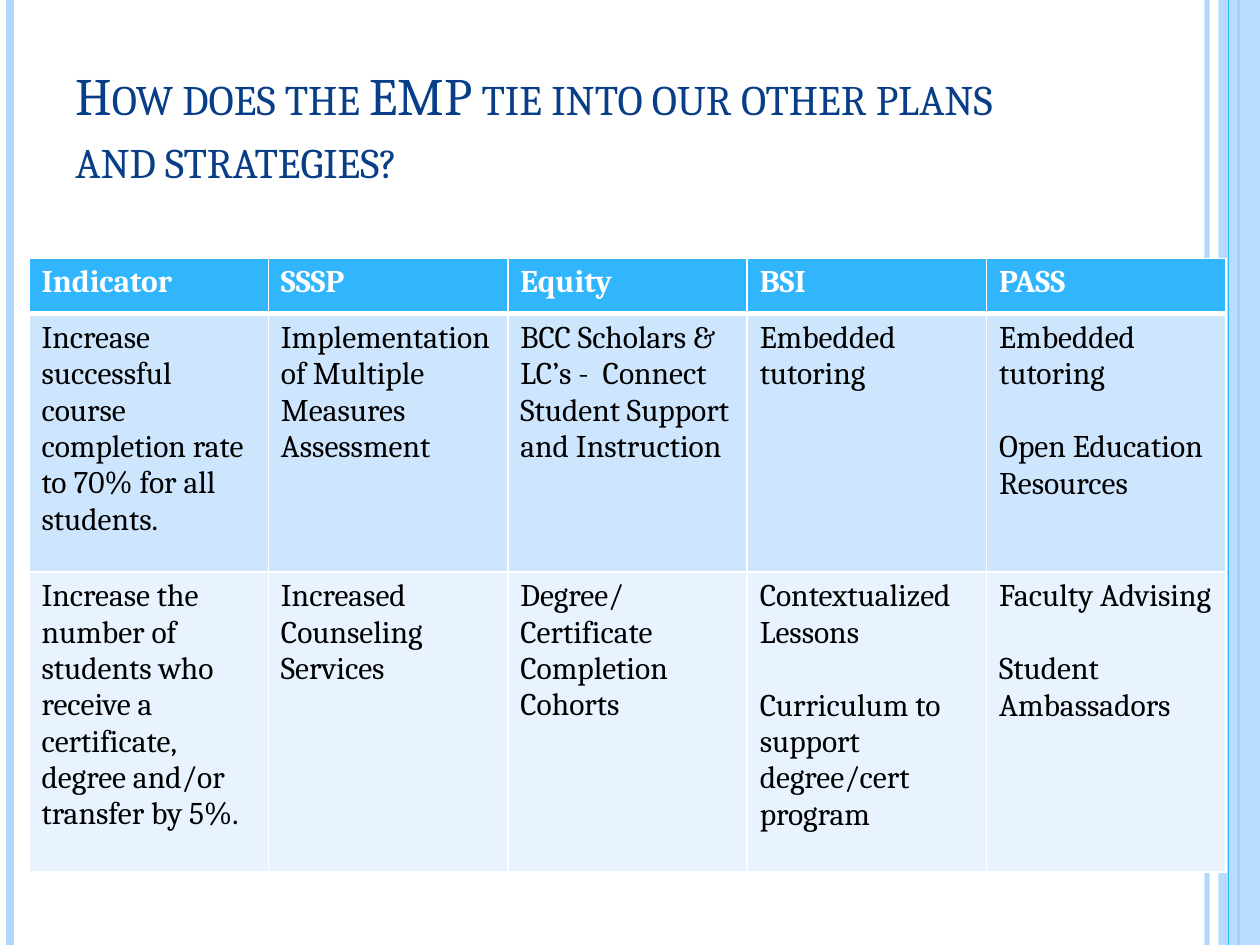
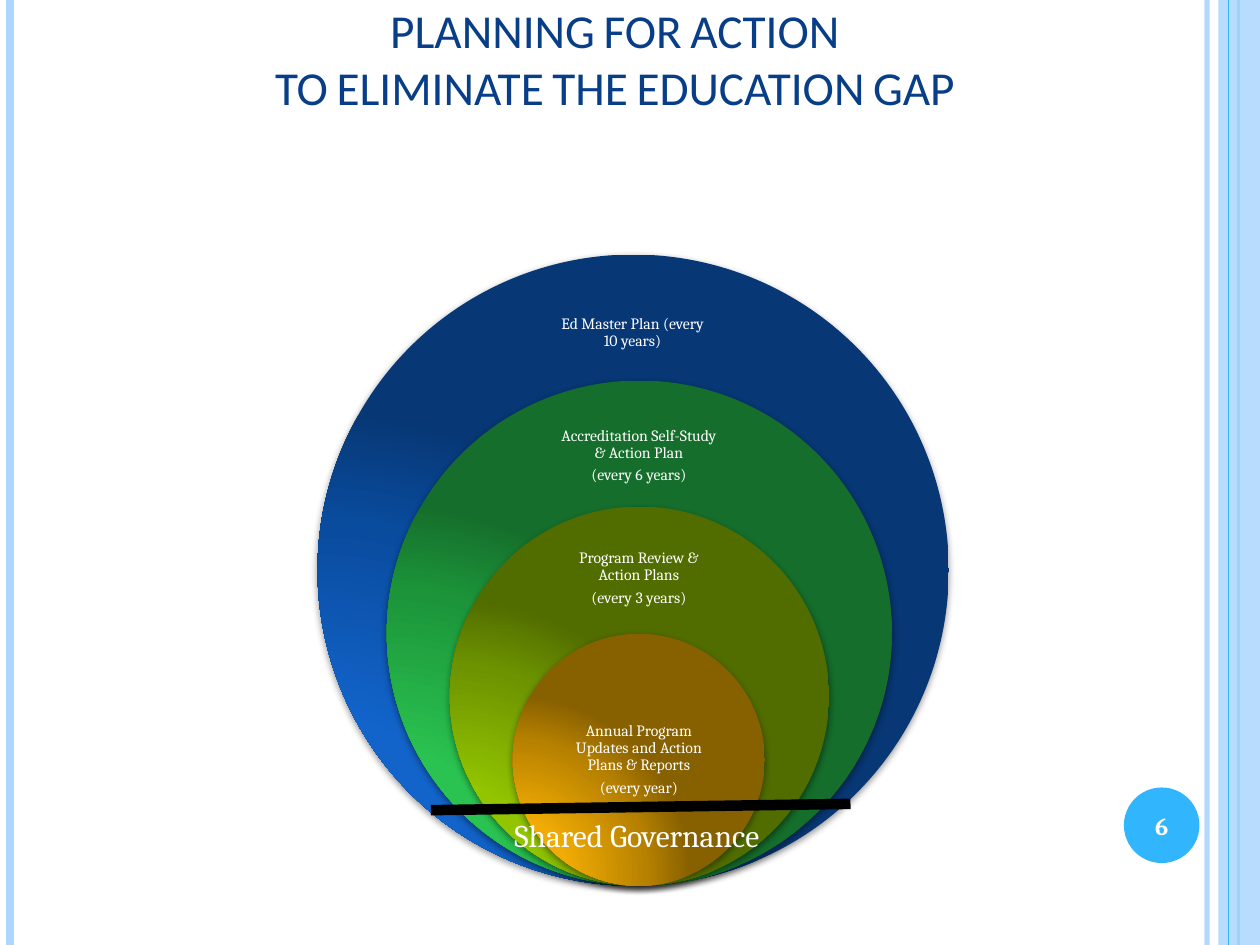
from dataclasses import dataclass

import pptx
import pptx.dml.color
import pptx.enum.shapes
import pptx.enum.text
import pptx.oxml
import pptx.oxml.ns
import pptx.util

PX = 9144  # EMU in one px, at 100 px to the inch
WIDTH, HEIGHT = 1000, 750

SHAPES = pptx.enum.shapes.MSO_SHAPE
ALIGN = pptx.enum.text.PP_ALIGN
ANCHOR = pptx.enum.text.MSO_ANCHOR
NAMESPACE = pptx.oxml.ns.nsdecls("a")
qn = pptx.oxml.ns.qn


@dataclass(frozen=True)
class Theme:
    body_font: str = "Cambria"
    plain_font: str = "Calibri"
    title: str = "073E87"
    accent: str = "31B6FD"
    band: str = "AED7FE"
    odd_row: str = "CEE5FE"
    even_row: str = "E8F3FF"
    white: str = "FFFFFF"
    black: str = "000000"
    title_size: int = 30
    plain_title_size: int = 27
    body_size: int = 18
    number_size: int = 14
    label_size: int = 9


@dataclass(frozen=True)
class Ring:
    centre: int
    diameter: int
    colors: tuple
    label: tuple
    label_top: int
    label_height: int


THEME = Theme()

PLANS = [
    ["Indicator", "SSSP", "Equity", "BSI", "PASS"],
    [
        "Increase successful course completion rate to 70% for all students.",
        "Implementation of Multiple Measures Assessment",
        "BCC Scholars & LC’s -  Connect Student Support and Instruction",
        "Embedded tutoring",
        ("Embedded tutoring", "Open Education Resources"),
    ],
    [
        "Increase the number of students who receive a certificate, "
        "degree and/or transfer by 5%.",
        "Increased Counseling Services",
        "Degree/Certificate Completion\nCohorts",
        ("Contextualized Lessons", "Curriculum to support degree/cert program"),
        ("Faculty Advising", "Student Ambassadors"),
    ],
]

RING_BOTTOM = 703
RING_STOPS = (0, 30, 75, 100)
RINGS = [
    Ring(502, 501, ("1368D2", "1264CB", "094B9D", "073774"),
         ("Ed Master Plan (every 10 years)",), 227, 75),
    Ring(507, 401, ("2BC952", "2AC250", "1C953A", "156E2B"),
         ("Accreditation Self-Study & Action Plan", "(every 6 years)"), 326, 72),
    Ring(507, 301, ("97CB00", "92C400", "6D9300", "516D00"),
         ("Program Review & Action Plans", "(every 3 years)"), 425, 68),
    Ring(507, 200, ("F9B104", "F0AB04", "B78100", "876000"),
         ("Annual Program Updates and Action Plans & Reports", "(every year)"), 553, 100),
]


def px(*lengths):
    return [pptx.util.Emu(length * PX) for length in lengths]


def rgb(color):
    return pptx.dml.color.RGBColor.from_string(color)


def set_opacity(shape, percent):
    for color in shape._element.spPr.iter(qn("a:srgbClr")):
        color.append(pptx.oxml.parse_xml(f'<a:alpha {NAMESPACE} val="{percent * 1000}"/>'))


def write(frame, text, *, size, color, font=THEME.body_font, bold=False, small_caps=False,
          align=ALIGN.LEFT, anchor=ANCHOR.TOP, margin=None, line_spacing=None,
          space_before=0, space_after=0):
    """Fill a text frame: a tuple gives paragraphs, a newline gives a line break."""
    frame.word_wrap = True
    frame.vertical_anchor = anchor
    if margin is not None:
        (frame.margin_left, frame.margin_top,
         frame.margin_right, frame.margin_bottom) = px(*[margin] * 4)
    for index, content in enumerate((text,) if isinstance(text, str) else text):
        paragraph = frame.add_paragraph() if index else frame.paragraphs[0]
        paragraph.alignment = align
        paragraph.space_before = pptx.util.Pt(space_before if index else 0)
        paragraph.space_after = pptx.util.Pt(space_after)
        if line_spacing:
            paragraph.line_spacing = line_spacing
        for line_index, line in enumerate(content.split("\n")):
            if line_index:
                paragraph.add_line_break()
            run = paragraph.add_run()
            run.text = line
            run.font.name = font
            run.font.size = pptx.util.Pt(size)
            run.font.bold = bold
            run.font.color.rgb = rgb(color)
            if small_caps:
                run._r.get_or_add_rPr().set("cap", "small")


class Deck:
    def __init__(self, theme):
        self.theme = theme
        self.presentation = pptx.Presentation()
        self.presentation.slide_width, self.presentation.slide_height = px(WIDTH, HEIGHT)
        self.slide = None

    def new_slide(self):
        """Start a slide with the vertical bands at both edges."""
        theme = self.theme
        self.slide = self.presentation.slides.add_slide(self.presentation.slide_layouts[6])
        inner_line = self.line(958, 0, 958, HEIGHT, theme.band, 3)
        set_opacity(inner_line, 93)
        self.line(8, 0, 8, HEIGHT, theme.band, 4.5)
        self.line(983, 0, 983, HEIGHT, theme.accent, 1.5)
        band = self.shape(SHAPES.RECTANGLE, 967, 0, 33, HEIGHT, theme.band)
        set_opacity(band, 87)
        self.line(975, 0, 975, HEIGHT, theme.accent, 0.75)

    def line(self, x1, y1, x2, y2, color, width):
        connector = self.slide.shapes.add_connector(
            pptx.enum.shapes.MSO_CONNECTOR.STRAIGHT, *px(x1, y1, x2, y2))
        connector.line.color.rgb = rgb(color)
        connector.line.width = pptx.util.Pt(width)
        connector._element.spPr.append(pptx.oxml.parse_xml(f"<a:effectLst {NAMESPACE}/>"))
        return connector

    def shape(self, kind, left, top, width, height, color):
        shape = self.slide.shapes.add_shape(kind, *px(left, top, width, height))
        shape.shadow.inherit = False
        shape.fill.solid()
        shape.fill.fore_color.rgb = rgb(color)
        shape.line.fill.background()
        return shape

    def text(self, left, top, width, height, text, **text_format):
        box = self.slide.shapes.add_textbox(*px(left, top, width, height))
        write(box.text_frame, text, **text_format)

    def title(self, left, top, width, height, text, **text_format):
        self.text(left, top, width, height, text, color=self.theme.title,
                  small_caps=True, anchor=ANCHOR.BOTTOM, **text_format)

    def page_number(self, number):
        disc = self.shape(SHAPES.OVAL, 892, 625, 60, 60, self.theme.accent)
        write(disc.text_frame, number, size=self.theme.number_size, color=self.theme.white,
              bold=True, align=ALIGN.CENTER, anchor=ANCHOR.MIDDLE, margin=0)

    def table(self, left, top, column_width, row_heights, rows):
        theme = self.theme
        columns = len(rows[0])
        table = self.slide.shapes.add_table(
            len(rows), columns,
            *px(left, top, column_width * columns, sum(row_heights))).table
        table.horz_banding = False
        for column in table.columns:
            column.width = px(column_width)[0]
        fills = (theme.accent, theme.odd_row, theme.even_row)
        for row_index, (row, height, fill) in enumerate(zip(rows, row_heights, fills)):
            header = row_index == 0
            table.rows[row_index].height = px(height)[0]
            for column_index, text in enumerate(row):
                cell = table.cell(row_index, column_index)
                self.cell_borders(cell, top=3 if row_index == 1 else 1,
                                  bottom=3 if header else 1)
                cell.fill.solid()
                cell.fill.fore_color.rgb = rgb(fill)
                write(cell.text_frame, text, size=theme.body_size, bold=header,
                      color=theme.white if header else theme.black, space_before=21)

    def cell_borders(self, cell, top, bottom):
        properties = cell._tc.get_or_add_tcPr()
        for side, width in (("L", 1), ("R", 1), ("T", top), ("B", bottom)):
            properties.append(pptx.oxml.parse_xml(
                f'<a:ln{side} {NAMESPACE} w="{width * 12700}"><a:solidFill>'
                f'<a:srgbClr val="{self.theme.white}"/></a:solidFill></a:ln{side}>'))

    def ring(self, ring):
        """Draw a shaded disc with its shadow and label."""
        disc = self.shape(SHAPES.OVAL, ring.centre - ring.diameter // 2,
                          RING_BOTTOM - ring.diameter, ring.diameter, ring.diameter,
                          ring.colors[0])
        properties = disc._element.spPr
        stops = "".join(
            f'<a:gs pos="{stop * 1000}"><a:srgbClr val="{color}"/></a:gs>'
            for stop, color in zip(RING_STOPS, ring.colors))
        properties.replace(properties.find(qn("a:solidFill")), pptx.oxml.parse_xml(
            f'<a:gradFill {NAMESPACE} rotWithShape="1"><a:gsLst>{stops}</a:gsLst>'
            '<a:path path="circle"><a:fillToRect l="5000" t="100000" r="120000" b="10000"/>'
            '</a:path></a:gradFill>'))
        properties.find(qn("a:effectLst")).append(pptx.oxml.parse_xml(
            f'<a:outerShdw {NAMESPACE} blurRad="50800" dist="20320" dir="5400000" '
            f'rotWithShape="0"><a:srgbClr val="{self.theme.black}"><a:alpha val="42000"/>'
            '</a:srgbClr></a:outerShdw>'))
        self.text(ring.centre - 70, ring.label_top, 140, ring.label_height, ring.label,
                  size=self.theme.label_size, color=self.theme.white, align=ALIGN.CENTER,
                  anchor=ANCHOR.MIDDLE, margin=7, line_spacing=0.9, space_after=3)


def add_plans_slide(deck):
    deck.new_slide()
    deck.title(50, 30, 817, 125, "How does the EMP tie into our other plans and strategies?",
               size=deck.theme.title_size)
    deck.table(23, 205, 190, (44, 205, 238), PLANS)


def add_cycle_slide(deck):
    theme = deck.theme
    deck.new_slide()
    deck.title(38, 13, 900, 83, "PLANNING FOR ACTION\nTO ELIMINATE THE EDUCATION GAP",
               size=theme.plain_title_size, font=theme.plain_font, align=ALIGN.CENTER)
    deck.page_number("6")
    for ring in RINGS:
        deck.ring(ring)
    deck.line(342, 643, 675, 638, theme.black, 6)
    deck.text(339, 643, 333, 40, "Shared Governance", size=theme.body_size,
              color=theme.white, align=ALIGN.CENTER)


def main():
    deck = Deck(THEME)
    add_plans_slide(deck)
    add_cycle_slide(deck)
    deck.presentation.save("out.pptx")


if __name__ == "__main__":
    main()
